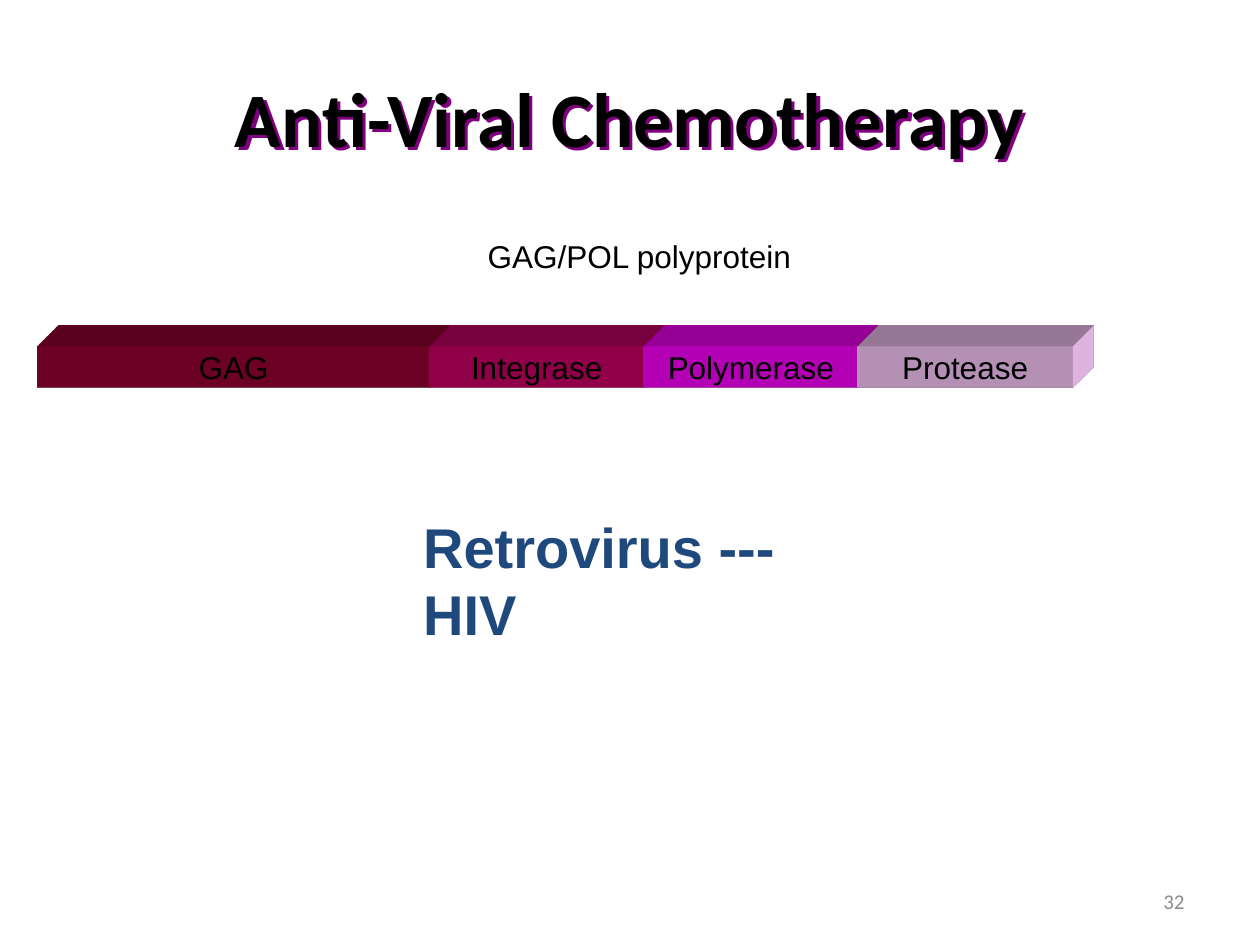
import pptx
import pptx.dml.color
import pptx.enum.shapes
import pptx.enum.text
import pptx.oxml
import pptx.oxml.ns
import pptx.util
from pptx.util import Inches

COLORS = {
    "text": "000000", "title_shadow": "800080", "virus": "1F497D", "number": "8C8C8C",
    "GAG": "990033", "Integrase": "CC0066", "Polymerase": "FF00FF", "Protease": "FFCCFF",
}
ALIGN = pptx.enum.text.PP_ALIGN
ANCHOR = pptx.enum.text.MSO_ANCHOR
NAMESPACE = pptx.oxml.ns.nsdecls("a")

GENES = [("GAG", 3.11), ("Integrase", 1.7), ("Polymerase", 1.7), ("Protease", 1.7)]
BAR_LEFT, BAR_TOP, BAR_HEIGHT = 0.3, 2.75, 0.33


def rgb(name):
    return pptx.dml.color.RGBColor.from_string(COLORS[name])


def write_text(shape, text, color="text", align=ALIGN.CENTER, anchor=ANCHOR.TOP,
               wrap=True, **font_values):
    frame = shape.text_frame
    frame.word_wrap = wrap
    frame.vertical_anchor = anchor
    paragraph = frame.paragraphs[0]
    paragraph.alignment = align
    run = paragraph.add_run()
    run.text = text
    values = {"name": "Arial", "size": pptx.util.Pt(18), **font_values}
    for attribute, value in values.items():
        setattr(run.font, attribute, value)
    run.font.color.rgb = rgb(color)


def add_label(slide, text, left, top, width, height, **text_format):
    box = slide.shapes.add_textbox(Inches(left), Inches(top), Inches(width), Inches(height))
    write_text(box, text, **text_format)


def append_effects(shape, *fragments):
    for fragment in fragments:
        shape._element.spPr.append(pptx.oxml.parse_xml(fragment))


def extrude(shape, color):
    """Give the shape an oblique depth towards the top right."""
    append_effects(
        shape,
        f'<a:scene3d {NAMESPACE}><a:camera prst="legacyObliqueTopRight"/>'
        '<a:lightRig rig="legacyFlat3" dir="b"/></a:scene3d>',
        f'<a:sp3d {NAMESPACE} extrusionH="430200" prstMaterial="legacyMatte">'
        '<a:bevelT w="13500" h="13500" prst="angle"/>'
        '<a:bevelB w="13500" h="13500" prst="angle"/>'
        f'<a:extrusionClr><a:srgbClr val="{COLORS[color]}"/></a:extrusionClr></a:sp3d>',
    )


def add_gene(slide, name, left, width):
    shape = slide.shapes.add_shape(
        pptx.enum.shapes.MSO_SHAPE.RECTANGLE,
        Inches(left), Inches(BAR_TOP), Inches(width), Inches(BAR_HEIGHT))
    shape.fill.solid()
    shape.fill.fore_color.rgb = rgb(name)
    shape.line.fill.background()
    shape.shadow.inherit = False
    extrude(shape, name)
    write_text(shape, name, anchor=ANCHOR.MIDDLE, wrap=False)


def add_polyprotein(slide):
    left = BAR_LEFT
    for name, width in GENES:
        add_gene(slide, name, left, width)
        left += width


def set_title(slide, text):
    title = slide.shapes.title
    title.left, title.top = Inches(0.5), Inches(0.3)
    title.width, title.height = Inches(9), Inches(1.25)
    title.fill.background()
    append_effects(
        title,
        f'<a:effectLst {NAMESPACE}><a:outerShdw dist="35921" dir="2700000" algn="ctr" '
        f'rotWithShape="0"><a:srgbClr val="{COLORS["title_shadow"]}"/>'
        '</a:outerShdw></a:effectLst>',
    )
    write_text(title, text, anchor=ANCHOR.MIDDLE, name="Calibri",
               size=pptx.util.Pt(44), bold=True)


def main():
    presentation = pptx.Presentation()
    presentation.slide_width, presentation.slide_height = Inches(10), Inches(7.5)
    slide = presentation.slides.add_slide(presentation.slide_layouts[5])

    add_label(slide, "32", 7.17, 6.95, 2.33, 0.4, color="number", align=ALIGN.RIGHT,
              anchor=ANCHOR.MIDDLE, name="Calibri", size=pptx.util.Pt(12))
    add_polyprotein(slide)
    add_label(slide, "GAG/POL polyprotein", 3.04, 1.83, 4.07, 0.4)
    set_title(slide, "Anti-Viral Chemotherapy")
    add_label(slide, "Retrovirus --- HIV", 3.26, 4.02, 3.43, 0.63, color="virus",
              align=ALIGN.LEFT, size=pptx.util.Pt(32), bold=True)

    presentation.save("out.pptx")


if __name__ == "__main__":
    main()
